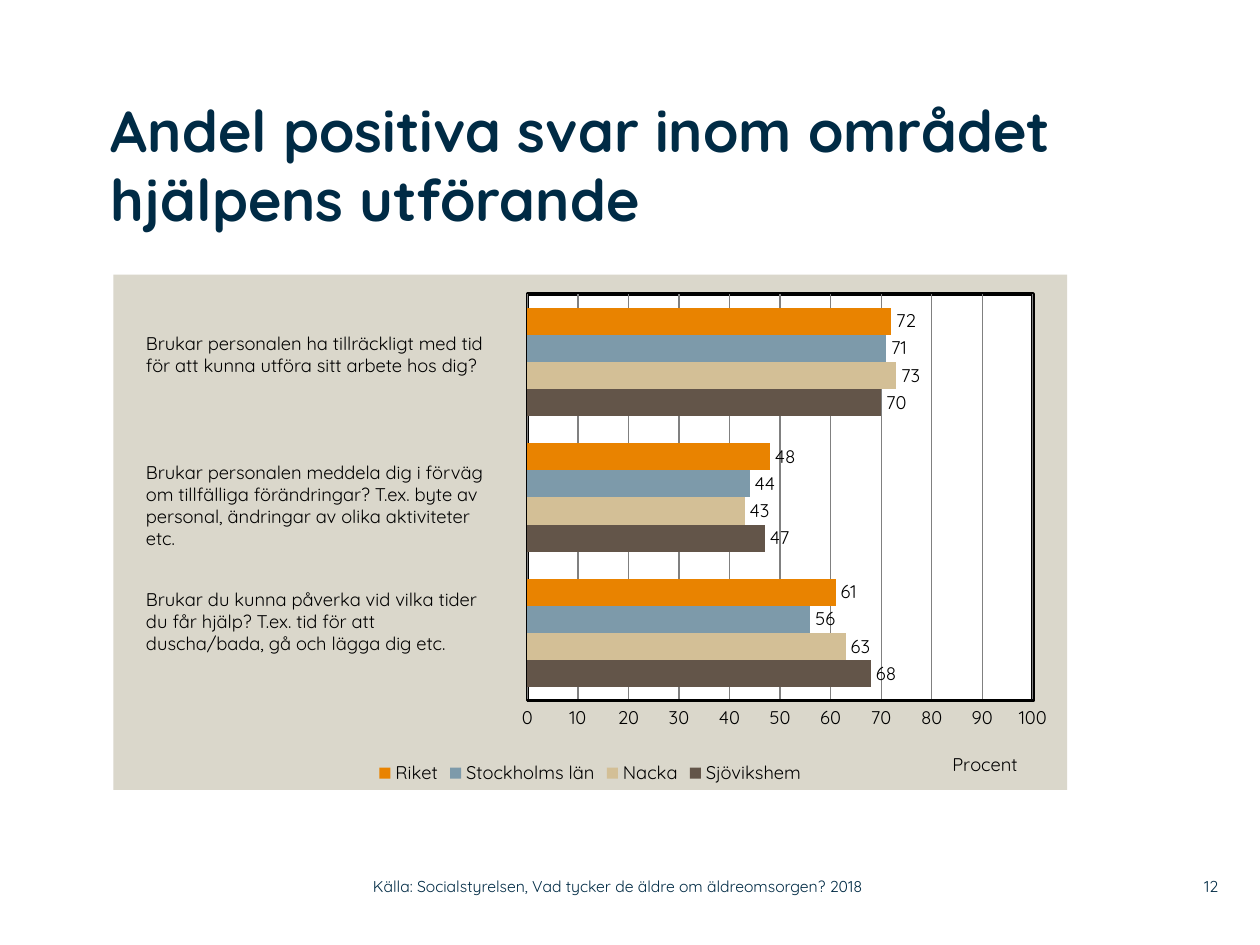
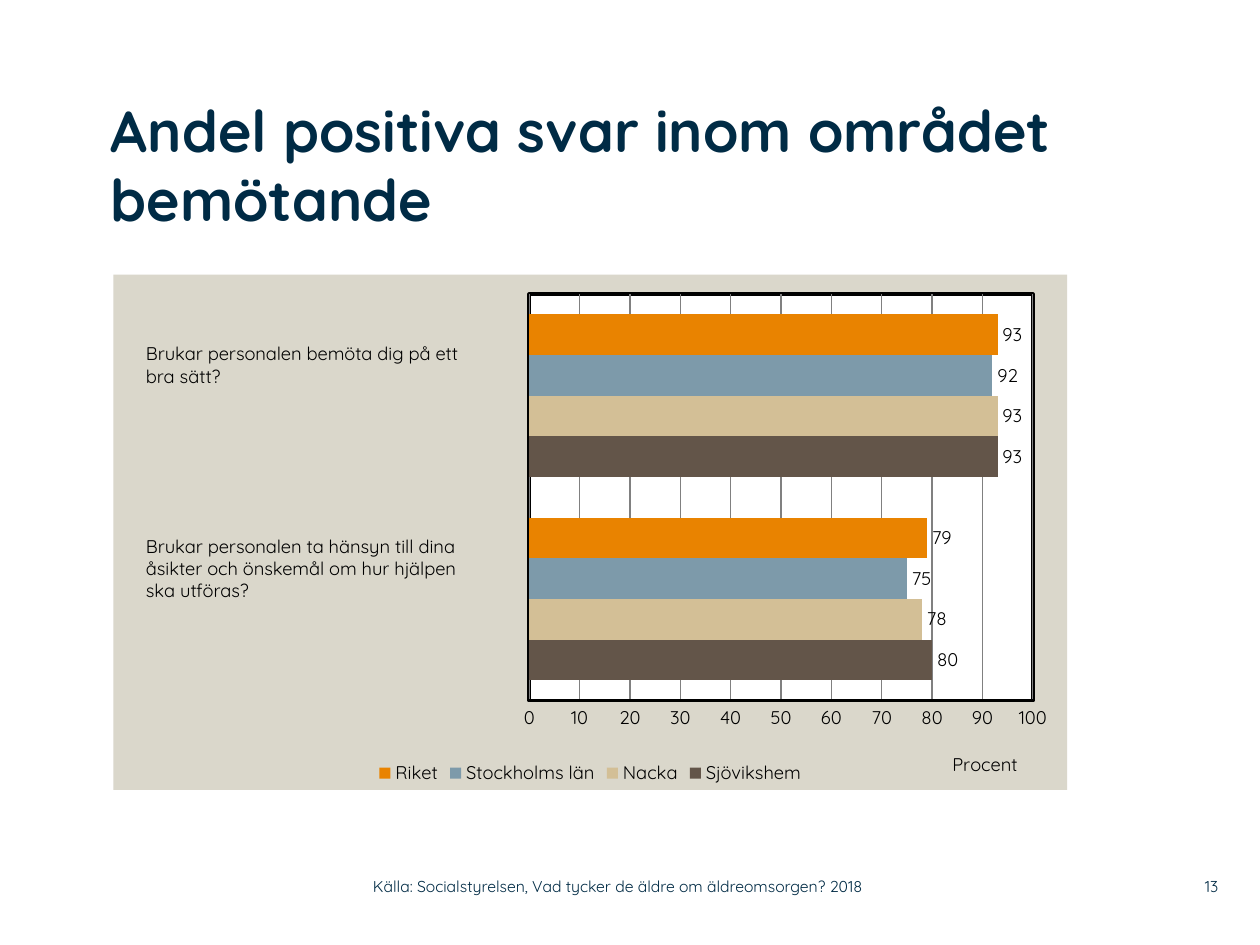
from lxml import etree
from pptx import Presentation
from pptx.chart.data import CategoryChartData
from pptx.dml.color import RGBColor
from pptx.enum.chart import XL_CHART_TYPE as ChartType
from pptx.enum.chart import XL_LABEL_POSITION as LabelPosition
from pptx.enum.chart import XL_LEGEND_POSITION as LegendPosition
from pptx.enum.chart import XL_TICK_MARK as TickMark
from pptx.enum.text import MSO_ANCHOR as Anchor
from pptx.enum.text import PP_ALIGN as Align
from pptx.oxml import parse_xml
from pptx.oxml.ns import nsdecls, qn
from pptx.util import Inches, Pt

# Content: questions run from top to bottom, values follow REGIONS
REGIONS = ["Riket", "Stockholms län", "Nacka", "Sjövikshem"]
AXIS_TITLE = "Procent"
SOURCE = "Källa: Socialstyrelsen, Vad tycker de äldre om äldreomsorgen? 2018"
PAGES = [
    {
        "number": 12,
        "title": "Andel positiva svar inom området hjälpens utförande",
        "plot": (0.434, 0.038, 0.53, 0.789),
        "questions": [
            {"top": 2.59, "lines": 2, "values": (72, 71, 73, 70),
             "text": ["Brukar personalen ha tillräckligt med tid",
                      "för att kunna utföra sitt arbete hos dig?"]},
            {"top": 3.61, "lines": 4, "values": (48, 44, 43, 47),
             "text": ["Brukar personalen meddela dig i förväg om tillfälliga "
                      "förändringar? T.ex. byte av personal, ändringar av "
                      "olika aktiviteter etc."]},
            {"top": 4.62, "lines": 3, "values": (61, 56, 63, 68),
             "text": ["Brukar du kunna påverka vid vilka tider",
                      "du får hjälp? T.ex. tid för att",
                      "duscha/bada, gå och lägga dig etc."]},
        ],
    },
    {
        "number": 13,
        "title": "Andel positiva svar inom området bemötande",
        "plot": (0.436, 0.038, 0.528, 0.789),
        "questions": [
            {"top": 2.67, "lines": 2, "values": (93, 92, 93, 93),
             "text": ["Brukar personalen bemöta dig på ett", "bra sätt?"]},
            {"top": 4.2, "lines": 3, "values": (79, 75, 78, 80),
             "text": ["Brukar personalen ta hänsyn till dina",
                      "åsikter och önskemål om hur hjälpen",
                      "ska utföras?"]},
        ],
    },
]

# Look
THEME = {
    "font": "Quicksand",
    "panel": "DAD7CB",
    "plot": "FFFFFF",
    "frame": "000000",
    "grid": "808080",
    "regions": ["E98300", "7D9AAA", "D3BF96", "635549"],
    "title": {"size": 33, "color": "002B45", "bold": True},
    "body": {"size": 10.5, "color": "000000", "bold": False},
    "footer": {"size": 9, "color": "002B45", "bold": False},
}

# Places in inches: left, top, width, height
SLIDE = (10, 7.5)
TITLE_AT = (0.88, 0.75, 7.6, 1.42)
CHART_AT = (0.9, 2.18, 7.57, 4.09)
SOURCE_AT = (2.96, 6.89, 4.43, 0.29)
NUMBER_AT = (9.2, 6.89, 0.47, 0.29)
QUESTION_LEFT, QUESTION_WIDTH = 1.06, 2.98
LINE_HEIGHT, BOX_PADDING = 0.18, 0.09
AXIS_TITLE_SPOT = (0.876, 0.918)  # shares of the chart


def style_font(font, style):
    values = {"name": THEME["font"], "size": Pt(style["size"]),
              "bold": style["bold"]}
    for name, value in values.items():
        setattr(font, name, value)
    font.color.rgb = RGBColor.from_string(style["color"])


def add_text(page, place, paragraphs, style, inset=0.0, **frame_format):
    """Add a wrapped text box; align applies to every paragraph."""
    align = frame_format.pop("align", Align.LEFT)
    frame = page.shapes.add_textbox(*map(Inches, place)).text_frame
    sides = {"margin_left": inset, "margin_right": inset,
             "margin_top": inset / 2, "margin_bottom": inset / 2}
    frame_format.update({side: Inches(gap) for side, gap in sides.items()})
    for name, value in {"word_wrap": True, **frame_format}.items():
        setattr(frame, name, value)
    for index, text in enumerate(paragraphs):
        para = frame.add_paragraph() if index else frame.paragraphs[0]
        para.alignment = align
        span = para.add_run()
        span.text = text
        style_font(span.font, style)


def set_layout(parent, index, shares, inner=False):
    """Place a chart part by shares of the chart area."""
    for old in parent.findall(qn("c:layout")):
        parent.remove(old)
    layout = etree.Element(qn("c:layout"))
    manual = etree.SubElement(layout, qn("c:manualLayout"))
    settings = [("layoutTarget", "inner")] if inner else []
    settings += [("xMode", "edge"), ("yMode", "edge")]
    settings += list(zip("xywh", shares))
    for name, value in settings:
        etree.SubElement(manual, qn(f"c:{name}")).set("val", str(value))
    parent.insert(index, layout)


def area_format(fill, line=None, width=0):
    """Build the fill and outline of a chart area."""
    def solid(color):
        return f'<a:solidFill><a:srgbClr val="{color}"/></a:solidFill>'

    outline = solid(line) if line else "<a:noFill/>"
    return parse_xml(f'<c:spPr {nsdecls("c", "a")}>{solid(fill)}'
                     f'<a:ln w="{Pt(width)}">{outline}</a:ln></c:spPr>')


def style_value_axis(axis):
    settings = {"minimum_scale": 0, "maximum_scale": 100, "major_unit": 10,
                "major_tick_mark": TickMark.NONE,
                "minor_tick_mark": TickMark.NONE,
                "has_major_gridlines": True}
    for name, value in settings.items():
        setattr(axis, name, value)
    style_font(axis.tick_labels.font, THEME["body"])
    lines = [(axis.format.line, "frame", 2),
             (axis.major_gridlines.format.line, "grid", 0.75)]
    for line, color, width in lines:
        line.color.rgb = RGBColor.from_string(THEME[color])
        line.width = Pt(width)
    para = axis.axis_title.text_frame.paragraphs[0]
    span = para.add_run()
    span.text = AXIS_TITLE
    style_font(span.font, THEME["body"])
    set_layout(axis.axis_title._element, 1, AXIS_TITLE_SPOT)


def add_bar_chart(page, questions, plot_shares):
    # Bars are stacked upwards, so questions and regions go in backwards
    rows = [question["values"] for question in reversed(questions)]
    data = CategoryChartData()
    data.categories = [str(row + 1) for row in range(len(rows))]
    for column in reversed(range(len(REGIONS))):
        data.add_series(REGIONS[column], [row[column] for row in rows])
    chart = page.shapes.add_chart(ChartType.BAR_CLUSTERED,
                                  *map(Inches, CHART_AT), data).chart
    style_font(chart.font, THEME["body"])
    chart.has_title = False

    # Legend and axes
    chart.has_legend = True
    chart.legend.position = LegendPosition.BOTTOM
    chart.legend.include_in_layout = False
    style_font(chart.legend.font, THEME["body"])
    chart.category_axis.visible = False
    style_value_axis(chart.value_axis)

    # Bars and their values
    plot = chart.plots[0]
    for name, value in {"gap_width": 100, "overlap": 0,
                        "vary_by_categories": False}.items():
        setattr(plot, name, value)
    for series, color in zip(plot.series, reversed(THEME["regions"])):
        series.format.fill.solid()
        series.format.fill.fore_color.rgb = RGBColor.from_string(color)
        labels = series.data_labels
        labels.show_value = True
        labels.position = LabelPosition.OUTSIDE_END
        style_font(labels.font, THEME["body"])

    # Panel and plot frame
    space = chart._chartSpace
    plot_area = space.chart.plotArea
    set_layout(plot_area, 0, plot_shares, inner=True)
    plot_area.append(area_format(THEME["plot"], THEME["frame"], 2))
    space.chart.addnext(area_format(THEME["panel"]))


def add_page(deck, content):
    page = deck.slides.add_slide(deck.slide_layouts[6])
    add_bar_chart(page, content["questions"], content["plot"])
    add_text(page, TITLE_AT, [content["title"]], THEME["title"])
    for question in content["questions"]:
        height = LINE_HEIGHT * question["lines"] + BOX_PADDING
        place = (QUESTION_LEFT, question["top"], QUESTION_WIDTH, height)
        add_text(page, place, question["text"], THEME["body"], inset=0.1)
    add_text(page, NUMBER_AT, [str(content["number"])], THEME["footer"],
             vertical_anchor=Anchor.MIDDLE, align=Align.RIGHT)
    add_text(page, SOURCE_AT, [SOURCE], THEME["footer"],
             vertical_anchor=Anchor.MIDDLE)


def main():
    deck = Presentation()
    deck.slide_width, deck.slide_height = map(Inches, SLIDE)
    for content in PAGES:
        add_page(deck, content)
    deck.save("out.pptx")


if __name__ == "__main__":
    main()
